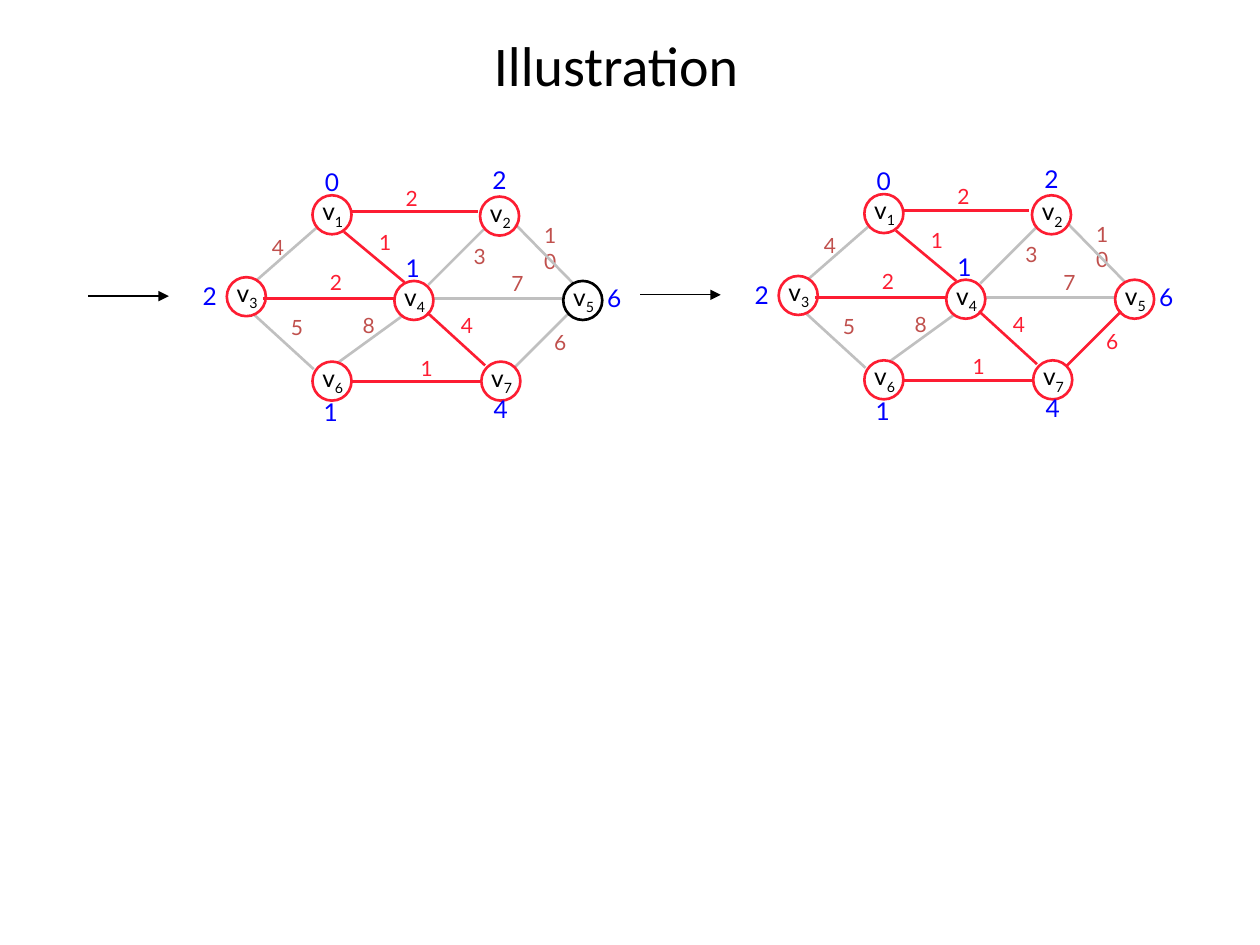
import pptx
import pptx.dml.color
import pptx.enum.shapes
import pptx.enum.text
import pptx.oxml
import pptx.oxml.ns
import pptx.util
from pptx.util import Inches

RED, GRAY, BLACK = "FD1D32", "C0C0C0", "000000"
BROWN, BLUE = "C0504D", "0000FF"
DIAMETER = 0.31
STEP_SHIFT = (4.38, -0.01)

# vertex number: (circle left, top), (distance, left, top)
VERTICES = {
    1: ((2.48, 1.55), ("0", 2.48, 1.28)),
    2: ((3.81, 1.56), ("2", 3.81, 1.26)),
    3: ((1.80, 2.20), ("2", 1.51, 2.18)),
    4: ((3.13, 2.23), ("1", 3.12, 1.96)),
    5: ((4.47, 2.23), ("6", 4.72, 2.20)),
    6: ((2.48, 2.87), ("1", 2.47, 3.10)),
    7: ((3.82, 2.87), ("4", 3.82, 3.08)),
}

# vertex pair: start point, end point, (weight, left, top)
EDGES = {
    (1, 3): ((2.51, 1.81), (2.03, 2.23), ("4", 2.06, 1.81)),
    (1, 2): ((2.79, 1.68), (3.79, 1.68), ("2", 3.12, 1.42)),
    (2, 5): ((4.09, 1.78), (4.55, 2.25), ("10", 4.22, 1.72)),
    (2, 4): ((3.85, 1.81), (3.40, 2.26), ("3", 3.66, 1.88)),
    (1, 4): ((2.73, 1.84), (3.21, 2.24), ("1", 2.91, 1.77)),
    (3, 4): ((3.13, 2.37), (2.09, 2.37), ("2", 2.52, 2.09)),
    (4, 5): ((4.46, 2.37), (3.44, 2.37), ("7", 3.96, 2.10)),
    (5, 7): ((4.52, 2.48), (4.08, 2.92), ("6", 4.30, 2.57)),
    (4, 7): ((3.39, 2.48), (3.85, 2.90), ("4", 3.56, 2.43)),
    (6, 7): ((3.81, 3.03), (2.79, 3.03), ("1", 3.24, 2.77)),
    (4, 6): ((3.19, 2.51), (2.68, 2.88), ("8", 2.78, 2.43)),
    (3, 6): ((2.02, 2.50), (2.49, 2.93), ("5", 2.21, 2.45)),
}

FIRST_TREE = {(1, 2), (1, 4), (3, 4), (4, 7), (6, 7)}
FINAL_TREE = FIRST_TREE | {(5, 7)}


def color(value):
    return pptx.dml.color.RGBColor.from_string(value)


def shifted(point, shift):
    return point[0] + shift[0], point[1] + shift[1]


def add_run(paragraph, text, size, text_color, font="Lato"):
    run = paragraph.add_run()
    run.text = text
    run.font.size = pptx.util.Pt(size)
    run.font.name = font
    run.font.color.rgb = color(text_color)
    return run


def add_label(shapes, position, size, text, points, text_color, wrap=False):
    """Add a text box and return its paragraph, so that runs can follow."""
    box = shapes.add_textbox(*map(Inches, position + size))
    frame = box.text_frame
    frame.word_wrap = wrap
    frame.auto_size = pptx.enum.text.MSO_AUTO_SIZE.SHAPE_TO_FIT_TEXT
    paragraph = frame.paragraphs[0]
    add_run(paragraph, text, points, text_color)
    return paragraph


def add_line(shapes, start, end, line_color, width):
    line = shapes.add_connector(
        pptx.enum.shapes.MSO_CONNECTOR.STRAIGHT, *map(Inches, start + end))
    line.line.color.rgb = color(line_color)
    line.line.width = pptx.util.Pt(width)
    pptx.oxml.ns.qn("a:effectLst")
    line._element.spPr.append(pptx.oxml.parse_xml(
        f"<a:effectLst {pptx.oxml.ns.nsdecls('a')}/>"))
    return line


def add_arrow(shapes, start, end):
    arrow = add_line(shapes, start, end, BLACK, 0.75)
    arrow.line._get_or_add_ln().append(pptx.oxml.parse_xml(
        f"<a:tailEnd {pptx.oxml.ns.nsdecls('a')} type='triangle'/>"))


def add_vertex(shapes, number, position, line_color):
    circle = shapes.add_shape(
        pptx.enum.shapes.MSO_SHAPE.OVAL,
        *map(Inches, position + (DIAMETER, DIAMETER)))
    circle.shadow.inherit = False
    circle.fill.background()
    circle.line.color.rgb = color(line_color)
    circle.line.width = pptx.util.Pt(1.5)
    paragraph = add_label(shapes, shifted(position, (-0.02, -0.04)),
                          (0.37, 0.34), "v", 14, BLACK)
    subscript = add_run(paragraph, str(number), 14, BLACK)
    subscript.font._element.set("baseline", "-25000")


def add_step(slide, shift, tree):
    """Draw an arrow and the graph after it, with the tree edges in red."""
    shapes = slide.shapes
    weights = shapes.add_group_shape()
    for pair, (start, end, (weight, left, top)) in EDGES.items():
        in_tree = pair in tree
        add_line(shapes, shifted(start, shift), shifted(end, shift),
                 RED if in_tree else GRAY, 1.5)
        two_digits = len(weight) > 1
        add_label(weights.shapes, shifted((left, top), shift),
                  (0.38 if two_digits else 0.29, 0.3), weight, 12,
                  RED if in_tree else BROWN, wrap=two_digits)

    reached = {vertex for pair in tree for vertex in pair}
    for number, (position, (distance, left, top)) in VERTICES.items():
        add_vertex(shapes, number, shifted(position, shift),
                   RED if number in reached else BLACK)
        add_label(shapes, shifted((left, top), shift), (0.31, 0.34),
                  distance, 14, BLUE)
    add_arrow(shapes, shifted((0.7, 2.35), shift),
              shifted((1.34, 2.35), shift))


def set_title(slide, text):
    title = slide.shapes.title
    title.left, title.top = Inches(0.64), Inches(0.17)
    title.width, title.height = Inches(8.5), Inches(0.67)
    title.text_frame.vertical_anchor = pptx.enum.text.MSO_ANCHOR.MIDDLE
    paragraph = title.text_frame.paragraphs[0]
    paragraph.alignment = pptx.enum.text.PP_ALIGN.CENTER
    add_run(paragraph, text, 32, BLACK, "Calibri")


def main():
    presentation = pptx.Presentation()
    presentation.slide_width = Inches(10)
    presentation.slide_height = Inches(7.5)
    slide = presentation.slides.add_slide(presentation.slide_layouts[5])
    set_title(slide, "Illustration")
    add_step(slide, (0, 0), FIRST_TREE)
    add_step(slide, STEP_SHIFT, FINAL_TREE)
    presentation.save("out.pptx")


if __name__ == "__main__":
    main()
